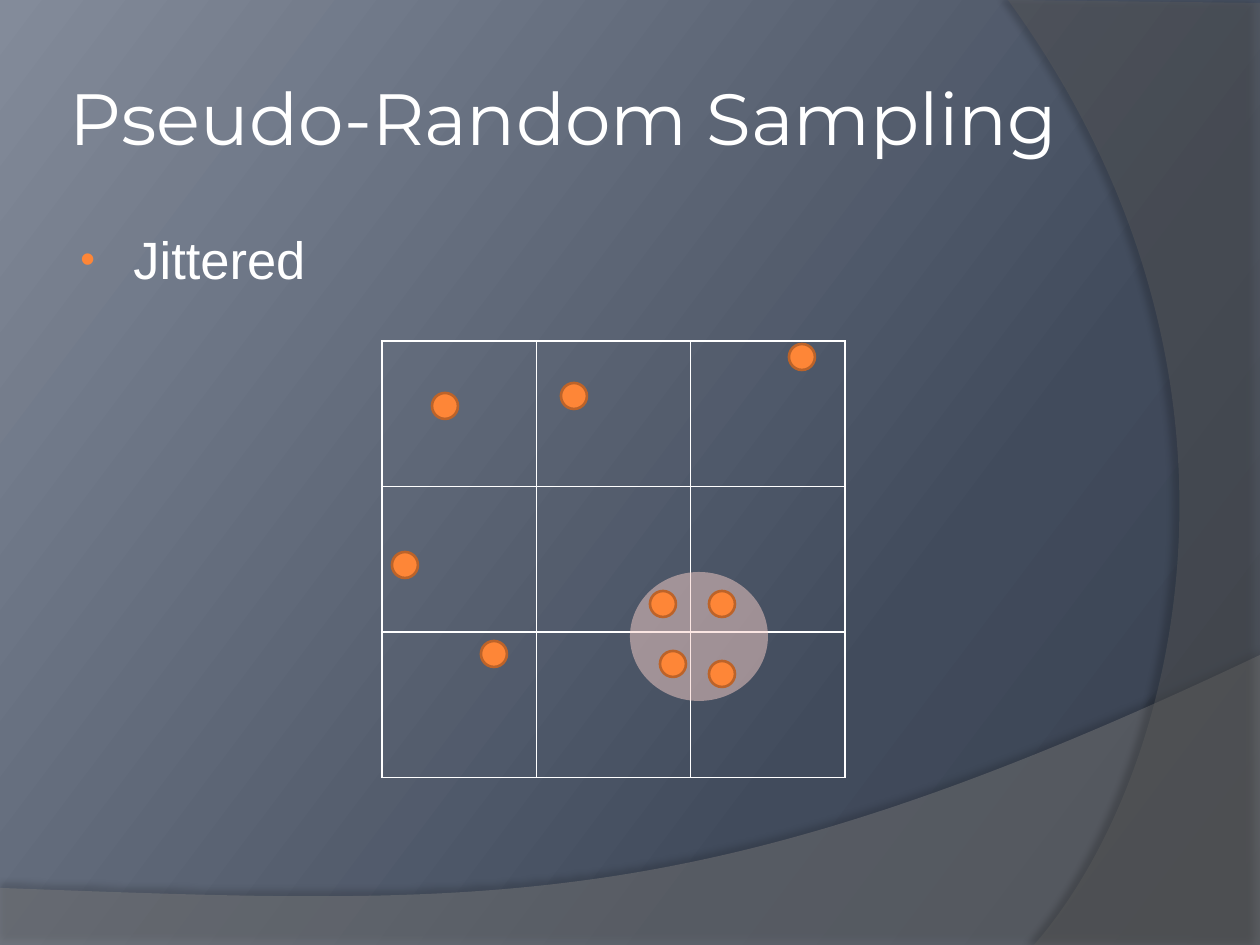
from copy import deepcopy

from lxml.etree import SubElement
from pptx import Presentation
from pptx.dml.color import RGBColor
from pptx.enum.shapes import MSO_SHAPE
from pptx.enum.text import MSO_ANCHOR
from pptx.oxml.ns import qn
from pptx.util import Emu, Pt

EMU_PER_PX = 914400 / 126
COLORS = {
    "white": "FFFFFF", "black": "000000",
    "dark": "373F4D", "slate": "414B5C", "mist": "838B9A",
    "wave": "7F7F7F", "arc": "5E5E5E", "highlight": "F8CFC8",
    "orange": "FE8637", "rust": "BC6329",
}
NO_STYLE_NO_GRID = "{2D5ABB26-0587-4C30-8999-92F81FD0307C}"
DOT_SIZE = 26
DOT_CORNERS = [
    (650, 591), (432, 393), (709, 591), (709, 661), (789, 344),
    (481, 641), (392, 552), (660, 651), (561, 383),
]


def px(length):
    return Emu(round(length * EMU_PER_PX))


def rgb(name):
    return RGBColor.from_string(COLORS[name])


def add_color(parent, name, alpha=100):
    color = SubElement(parent, qn("a:srgbClr"), val=COLORS[name])
    if alpha < 100:
        SubElement(color, qn("a:alpha"), val=str(alpha * 1000))


class SlideBuilder:
    def __init__(self, page):
        self.page = page

    def background(self, stops, angle):
        """Fill the page with three gradient stops; angle is counter-clockwise."""
        fill = self.page.background.fill
        fill.gradient()
        fill.gradient_angle = angle
        stop_list = self.page.element.xpath(".//a:gsLst")[0]
        stop_list.append(deepcopy(stop_list[0]))
        for stop, (position, color) in zip(fill.gradient_stops, stops):
            stop.position = position
            stop.color.rgb = rgb(color)

    def paint(self, shape, color, alpha=100, line=None):
        shape.shadow.inherit = False
        shape.fill.solid()
        shape.fill.fore_color.rgb = rgb(color)
        if alpha < 100:
            solid = shape.element.spPr.find(qn("a:solidFill"))
            SubElement(solid[0], qn("a:alpha"), val=str(alpha * 1000))
        if line:
            shape.line.color.rgb = rgb(line)
            shape.line.width = Pt(1.5)
        else:
            shape.line.fill.background()

    def swoosh(self, corners, controls, color, alpha, shadow_alpha, distance, direction):
        """Draw an outline whose last segment is a curve with two control points."""
        points = [(px(x), px(y)) for x, y in corners]
        builder = self.page.shapes.build_freeform(*points[0], scale=1.0)
        builder.add_line_segments(points[1:], close=False)
        shape = builder.convert_to_shape()
        last_line = shape.element.xpath(".//a:lnTo")[-1]
        outline = last_line.getparent()
        curve = SubElement(outline, qn("a:cubicBezTo"))
        for x, y in controls:
            SubElement(curve, qn("a:pt"),
                       x=str(px(x) - shape.left), y=str(px(y) - shape.top))
        curve.append(last_line[0])
        outline.remove(last_line)
        SubElement(outline, qn("a:close"))
        self.paint(shape, color, alpha)
        effects = shape.element.spPr.find(qn("a:effectLst"))
        shadow = SubElement(
            effects, qn("a:outerShdw"), blurRad=str(Pt(4)), dist=str(Pt(distance)),
            dir=str(direction * 60000), algn="ctr", rotWithShape="0")
        add_color(shadow, "black", shadow_alpha)

    def ellipse(self, left, top, width, height, color, alpha=100, line=None):
        shape = self.page.shapes.add_shape(
            MSO_SHAPE.OVAL, px(left), px(top), px(width), px(height))
        self.paint(shape, color, alpha, line)

    def grid(self, left, top, width, height, rows, columns):
        """Draw a table whose last row stays open below its top border."""
        table = self.page.shapes.add_table(
            rows, columns, px(left), px(top), px(width), px(height)).table
        table.first_row = table.horz_banding = False
        table._tbl.tblPr.find(qn("a:tableStyleId")).text = NO_STYLE_NO_GRID
        for index, row in enumerate(table.rows):
            sides = ("lnT",) if index == rows - 1 else ("lnL", "lnR", "lnT", "lnB")
            for cell in row.cells:
                properties = cell._tc.get_or_add_tcPr()
                for side in sides:
                    border = SubElement(properties, qn(f"a:{side}"), w=str(Pt(1)))
                    add_color(SubElement(border, qn("a:solidFill")), "white")
                cell.fill.background()

    def text(self, left, top, width, height, wording, font, size):
        box = self.page.shapes.add_textbox(px(left), px(top), px(width), px(height))
        frame = box.text_frame
        frame.word_wrap = True
        frame.text = wording
        span = frame.paragraphs[0].runs[0]
        span.font.name = font
        span.font.size = Pt(size)
        span.font.color.rgb = rgb("white")
        return frame

    def title(self, left, top, width, height, wording):
        frame = self.text(left, top, width, height, wording, "Montserrat", 41.4)
        frame.vertical_anchor = MSO_ANCHOR.MIDDLE
        frame.margin_left = frame.margin_right = Pt(3.6)
        frame.margin_top = frame.margin_bottom = Pt(3.6)

    def bullet(self, left, top, width, height, wording):
        para = self.text(left, top, width, height, wording, "Arial", 30).paragraphs[0]
        para.space_before = Pt(6)
        properties = para._p.get_or_add_pPr()
        properties.set("marL", str(px(58)))
        properties.set("indent", str(px(-53)))
        add_color(SubElement(properties, qn("a:buClr")), "orange")
        SubElement(properties, qn("a:buSzPct"), val="80000")
        SubElement(properties, qn("a:buFont"), typeface="Arial")
        SubElement(properties, qn("a:buChar"), char="•")


def main():
    deck = Presentation()
    deck.slide_width, deck.slide_height = px(1260), px(945)
    slide = SlideBuilder(deck.slides.add_slide(deck.slide_layouts[6]))

    slide.background([(0, "dark"), (0.3, "slate"), (1, "mist")], angle=143)
    slide.swoosh([(0, 888), (0, 946), (1260, 946), (1260, 655), (0, 888)],
                 [(704, 919), (493, 906)],
                 "wave", 45, shadow_alpha=35, distance=3.5, direction=270)
    slide.swoosh([(1260, 3), (1260, 945), (1034, 945), (1008, 0)],
                 [(1178, 780), (1283, 378)],
                 "arc", 40, shadow_alpha=45, distance=4, direction=180)

    slide.grid(382, 341, 463, 582, rows=4, columns=3)
    slide.ellipse(630, 572, 138, 129, "highlight", alpha=50)
    slide.title(63, 38, 1074, 157, "Pseudo-Random Sampling")
    slide.bullet(63, 221, 1029, 103, "Jittered")
    for left, top in DOT_CORNERS:
        slide.ellipse(left, top, DOT_SIZE, DOT_SIZE, "orange", line="rust")
    deck.save("out.pptx")


if __name__ == "__main__":
    main()
